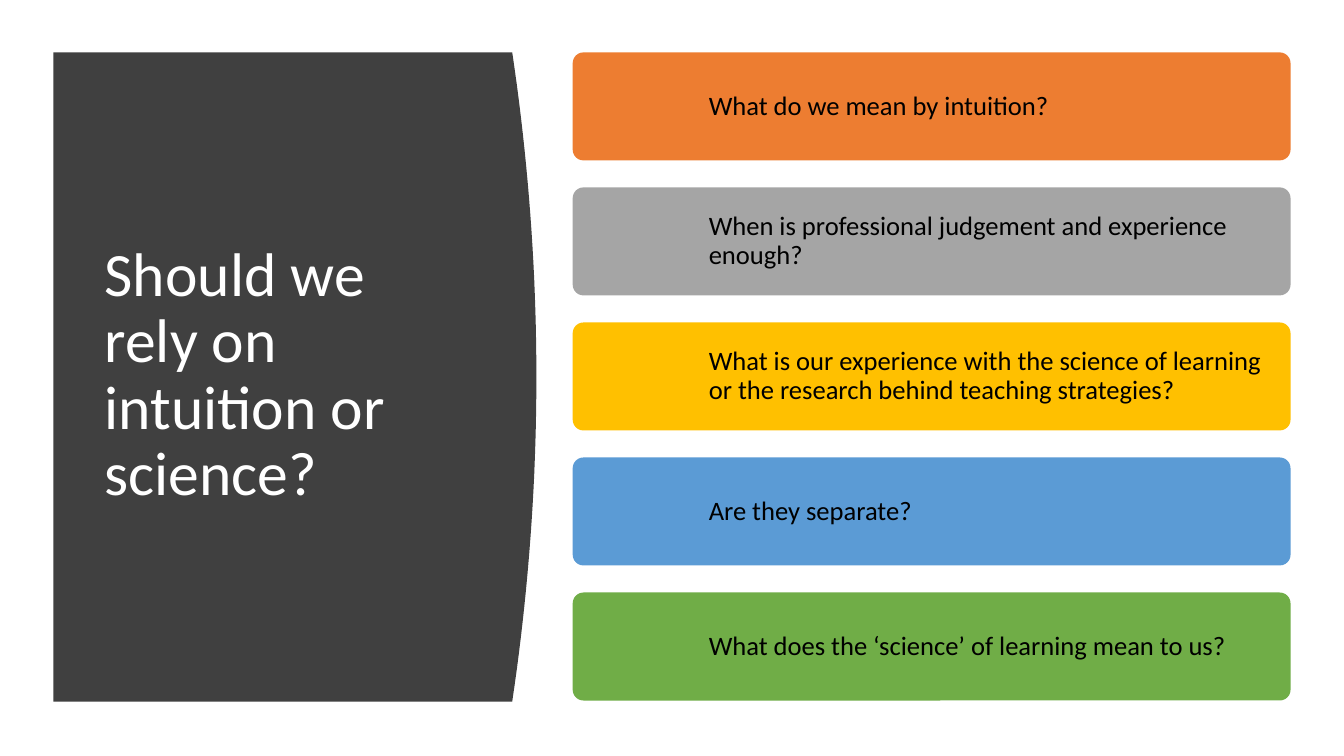
from pptx import Presentation
from pptx.dml.color import RGBColor
from pptx.enum.shapes import MSO_SHAPE as Preset
from pptx.enum.text import MSO_ANCHOR as Anchor
from pptx.util import Inches, Pt

QUESTIONS = [
    ("What do we mean by intuition?", "ED7D31"),
    ("When is professional judgement and experience enough?", "A5A5A5"),
    ("What is our experience with the science of learning "
     "or the research behind teaching strategies?", "FFC000"),
    ("Are they separate?", "5B9BD5"),
    ("What does the ‘science’ of learning mean to us?", "70AD47"),
]


def paint(shape, color):
    shape.shadow.inherit = False
    shape.fill.solid()
    shape.fill.fore_color.rgb = RGBColor.from_string(color)
    shape.line.fill.background()


def add_text(slide, box, text, size, color, inset):
    frame = slide.shapes.add_textbox(*map(Inches, box)).text_frame
    frame.word_wrap = True
    frame.vertical_anchor = Anchor.MIDDLE
    frame.margin_left = frame.margin_right = Inches(inset)
    frame.margin_top = frame.margin_bottom = Inches(inset)
    frame.text = text
    paragraph = frame.paragraphs[0]
    paragraph.line_spacing = 0.9
    font = paragraph.runs[0].font
    font.name = "Calibri"
    font.size = Pt(size)
    font.color.rgb = RGBColor.from_string(color)


def add_title_panel(slide, box, title):
    left, top, width, height = box
    bulge = 0.05 * width
    steps = 40
    curve = []
    for step in range(steps + 1):
        share = step / steps
        x = left + width - bulge * (2 * share - 1) ** 2
        curve.append((Inches(x), Inches(top + share * height)))
    outline = slide.shapes.build_freeform(Inches(left), Inches(top))
    outline.add_line_segments(curve + [(Inches(left), Inches(top + height))])
    paint(outline.convert_to_shape(), "404040")
    title_box = (left + 0.41, top + 0.59, 3.74, 5.24)
    add_text(slide, title_box, title, 44, "FFFFFF", 0.1)


def add_question_list(slide, box, questions):
    left, top, width, height = box
    gap_share = 0.25
    bar_height = height / (len(questions) + gap_share * (len(questions) - 1))
    text_indent = 1.24
    for row, (question, color) in enumerate(questions):
        bar_top = top + row * bar_height * (1 + gap_share)
        bar = slide.shapes.add_shape(
            Preset.ROUNDED_RECTANGLE,
            *map(Inches, (left, bar_top, width, bar_height)))
        bar.adjustments[0] = 0.1
        paint(bar, color)
        text_box = (left + text_indent, bar_top, width - text_indent, bar_height)
        add_text(slide, text_box, question, 19, "000000", 0.11)


def main():
    deck = Presentation()
    deck.slide_width, deck.slide_height = Inches(13.33), Inches(7.5)
    slide = deck.slides.add_slide(deck.slide_layouts[6])
    add_title_panel(slide, (0.53, 0.52, 4.79, 6.44),
                    "Should we rely on intuition or science?")
    add_question_list(slide, (5.68, 0.52, 7.12, 6.43), QUESTIONS)
    deck.save("out.pptx")


if __name__ == "__main__":
    main()
